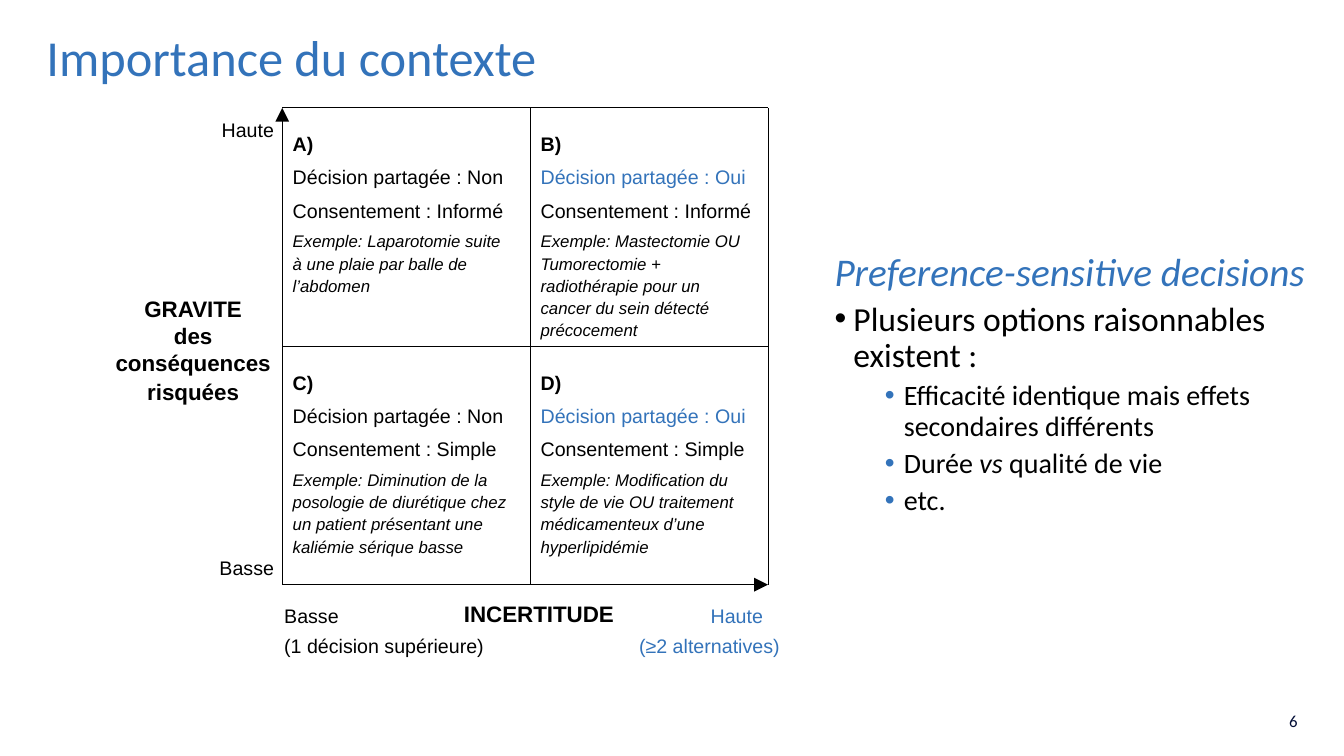
from dataclasses import dataclass

from lxml import etree
from pptx import Presentation
from pptx.dml.color import RGBColor
from pptx.enum.shapes import MSO_CONNECTOR
from pptx.enum.text import MSO_ANCHOR, MSO_AUTO_SIZE, PP_ALIGN
from pptx.oxml.ns import qn
from pptx.util import Pt

LEFT, CENTER, RIGHT = PP_ALIGN.LEFT, PP_ALIGN.CENTER, PP_ALIGN.RIGHT
TOP, MIDDLE = MSO_ANCHOR.TOP, MSO_ANCHOR.MIDDLE
NO_FIT = MSO_AUTO_SIZE.NONE
STRAIGHT = MSO_CONNECTOR.STRAIGHT

BLACK, BLUE, NAVY = "000000", "3373BA", "030E37"
COLUMNS = (201.6, 378.7, 548.6)
ROWS = (77, 247.5, 417.6)
CELL_PADDING = (7.5, 17.3)
CELL_SIZE = (166, 150)


@dataclass
class Span:
    """A run of text with its format."""
    text: str
    size: float = 14
    color: str = BLACK
    bold: bool = False
    italic: bool = False
    font: str = "Arial"


@dataclass
class Para:
    """A paragraph; spans after the first may start on a new line."""
    spans: list[Span]
    before: float = 0
    spacing: float = 1
    align: PP_ALIGN = LEFT
    broken: bool = False
    level: int = 0
    indent: float = 0
    bullet_color: str = ""


@dataclass
class Box:
    """A text box with its place."""
    left: float
    top: float
    width: float
    height: float
    paras: list[Para]
    inset: tuple[float, float] = (0, 0)
    anchor: MSO_ANCHOR = TOP


@dataclass
class Quadrant:
    """One cell of the grid."""
    column: int
    row: int
    letter: str
    shared: str
    consent: str
    example: list[str]


@dataclass
class Rule:
    """A straight line, with an arrowhead at its end if asked."""
    start: tuple[float, float]
    end: tuple[float, float]
    arrow: bool = False


QUADRANTS = [
    Quadrant(0, 0, "A)", "Non", "Informé", [
        "Exemple: Laparotomie suite", "à une plaie par balle de", "l’abdomen"]),
    Quadrant(1, 0, "B)", "Oui", "Informé", [
        "Exemple: Mastectomie OU", "Tumorectomie +", "radiothérapie pour un",
        "cancer du sein détecté", "précocement"]),
    Quadrant(0, 1, "C)", "Non", "Simple", [
        "Exemple: Diminution de la", "posologie de diurétique chez",
        "un patient présentant une", "kaliémie sérique basse"]),
    Quadrant(1, 1, "D)", "Oui", "Simple", [
        "Exemple: Modification du", "style de vie OU traitement",
        "médicamenteux d’une", "hyperlipidémie"]),
]

RULES = [
    Rule((COLUMNS[0], ROWS[2]), (COLUMNS[0], ROWS[0]), arrow=True),
    Rule((COLUMNS[0], ROWS[2]), (COLUMNS[2], ROWS[2]), arrow=True),
    *[Rule((COLUMNS[0], y), (COLUMNS[2], y)) for y in ROWS[:2]],
    *[Rule((x, ROWS[0]), (x, ROWS[2])) for x in COLUMNS[1:]],
]


def calibri(text: str, size: float, color: str = BLACK, italic: bool = False) -> Span:
    """Return a span in Calibri."""
    return Span(text, size, color, italic=italic, font="Calibri")


def label(left: float, top: float, width: float, text: str,
          color: str = BLACK, align: PP_ALIGN = LEFT) -> Box:
    """Return a one-line axis label."""
    return Box(left, top, width, 18, [Para([Span(text, color=color)], align=align)])


def detail(*spans: Span) -> Para:
    """Return a second-level bullet."""
    return Para(list(spans), 5, 0.9, level=2, indent=49.5, bullet_color=BLUE)


def heading(text: str, before: float = 0) -> Para:
    """Return one centred line of an axis name."""
    return Para([Span(text, 16, bold=True)], before, align=CENTER)


AXIS_LABELS = [
    Box(80, 211, 116, 76, [
        heading("GRAVITE"), heading("des"),
        heading("conséquences"), heading("risquées", 1.5)]),
    Box(325, 428.4, 120, 20, [heading("INCERTITUDE")]),
    label(130, 84.2, 65.8, "Haute", align=RIGHT),
    label(130, 397.4, 65.8, "Basse", align=RIGHT),
    label(203, 431.3, 60, "Basse"),
    label(203, 452.9, 165, "(1 décision supérieure)"),
    label(507.6, 431.3, 60, "Haute", BLUE),
    label(456.5, 452.9, 120, "(≥2 alternatives)", BLUE),
]

DECISIONS = Box(589, 177, 358.6, 181, [
    Para([calibri("Preference-sensitive decisions", 28, BLUE, True)], spacing=0.9),
    Para([calibri("Plusieurs options raisonnables existent :", 24)],
         5, 0.9, level=1, indent=13.5, bullet_color=BLACK),
    detail(calibri("Efficacité identique mais effets secondaires différents", 20)),
    detail(calibri("Durée ", 20), calibri("vs", 20, italic=True),
           calibri(" qualité de vie", 20)),
    detail(calibri("etc.", 20)),
], inset=(7.2, 3.6))

PAGE_NUMBER = Box(718, 500.5, 216, 28.8, [
    Para([calibri("6", 12, NAVY)], align=RIGHT)], (7.2, 3.6), MIDDLE)

TITLE = Box(26, 20.2, 907, 67, [
    Para([calibri("Importance du contexte", 36, BLUE)], spacing=0.9)], (7.2, 3.6))


def rgb(value: str) -> RGBColor:
    """Turn a hex string into a colour."""
    return RGBColor.from_string(value)


def add_bullet(paragraph, indent: float, color: str) -> None:
    """Give a paragraph a hanging round bullet."""
    properties = paragraph._p.get_or_add_pPr()
    properties.set("marL", str(Pt(indent)))
    properties.set("indent", str(-Pt(13.5)))
    tint = etree.SubElement(properties, qn("a:buClr"))
    etree.SubElement(tint, qn("a:srgbClr"), val=color)
    etree.SubElement(properties, qn("a:buFont"), typeface="Arial")
    etree.SubElement(properties, qn("a:buChar"), char="•")


def fill_paragraph(paragraph, para: Para) -> None:
    """Format a paragraph and write its runs."""
    if para.bullet_color:
        add_bullet(paragraph, para.indent, para.bullet_color)
    paragraph.level = para.level
    paragraph.alignment = para.align
    paragraph.line_spacing = para.spacing
    paragraph.space_before = Pt(para.before)
    for index, span in enumerate(para.spans):
        if index and para.broken:
            paragraph.add_line_break()
        run = paragraph.add_run()
        run.text = span.text
        run.font.name = span.font
        run.font.size = Pt(span.size)
        run.font.bold = span.bold
        run.font.italic = span.italic
        run.font.color.rgb = rgb(span.color)


def fill_box(shape, box: Box) -> None:
    """Place a shape and write its paragraphs."""
    shape.left, shape.top = Pt(box.left), Pt(box.top)
    shape.width, shape.height = Pt(box.width), Pt(box.height)
    frame = shape.text_frame
    frame.word_wrap = True
    frame.auto_size = NO_FIT
    frame.vertical_anchor = box.anchor
    frame.margin_left = frame.margin_right = Pt(box.inset[0])
    frame.margin_top = frame.margin_bottom = Pt(box.inset[1])
    for index, para in enumerate(box.paras):
        fill_paragraph(frame.add_paragraph() if index else frame.paragraphs[0], para)


def quadrant_box(cell: Quadrant) -> Box:
    """Lay out the text of one quadrant."""
    shared_color = BLUE if cell.shared == "Oui" else BLACK
    return Box(COLUMNS[cell.column] + CELL_PADDING[0], ROWS[cell.row] + CELL_PADDING[1],
               *CELL_SIZE, [
        Para([Span(cell.letter, bold=True)]),
        Para([Span(f"Décision partagée : {cell.shared}", color=shared_color)], 7),
        Para([Span(f"Consentement : {cell.consent}")], 7),
        Para([Span(line, 12, italic=True) for line in cell.example], 5, 1.1, broken=True),
    ])


def add_rule(page, rule: Rule) -> None:
    """Draw one line of the grid."""
    line = page.shapes.add_connector(STRAIGHT, *map(Pt, rule.start + rule.end))
    line.line.color.rgb = rgb(BLACK)
    line.line.width = Pt(0.75)
    if rule.arrow:
        etree.SubElement(line.line._get_or_add_ln(), qn("a:tailEnd"),
                         type="triangle", w="lg", len="lg")
    etree.SubElement(line._element.spPr, qn("a:effectLst"))


def main() -> None:
    """Build the slide and save it."""
    deck = Presentation()
    deck.slide_width, deck.slide_height = Pt(960), Pt(540)
    page = deck.slides.add_slide(deck.slide_layouts.get_by_name("Title Only"))
    fill_box(page.shapes.title, TITLE)
    for rule in RULES:
        add_rule(page, rule)
    for box in [*AXIS_LABELS, *map(quadrant_box, QUADRANTS), DECISIONS, PAGE_NUMBER]:
        fill_box(page.shapes.add_textbox(0, 0, 0, 0), box)
    deck.save("out.pptx")


if __name__ == "__main__":
    main()
